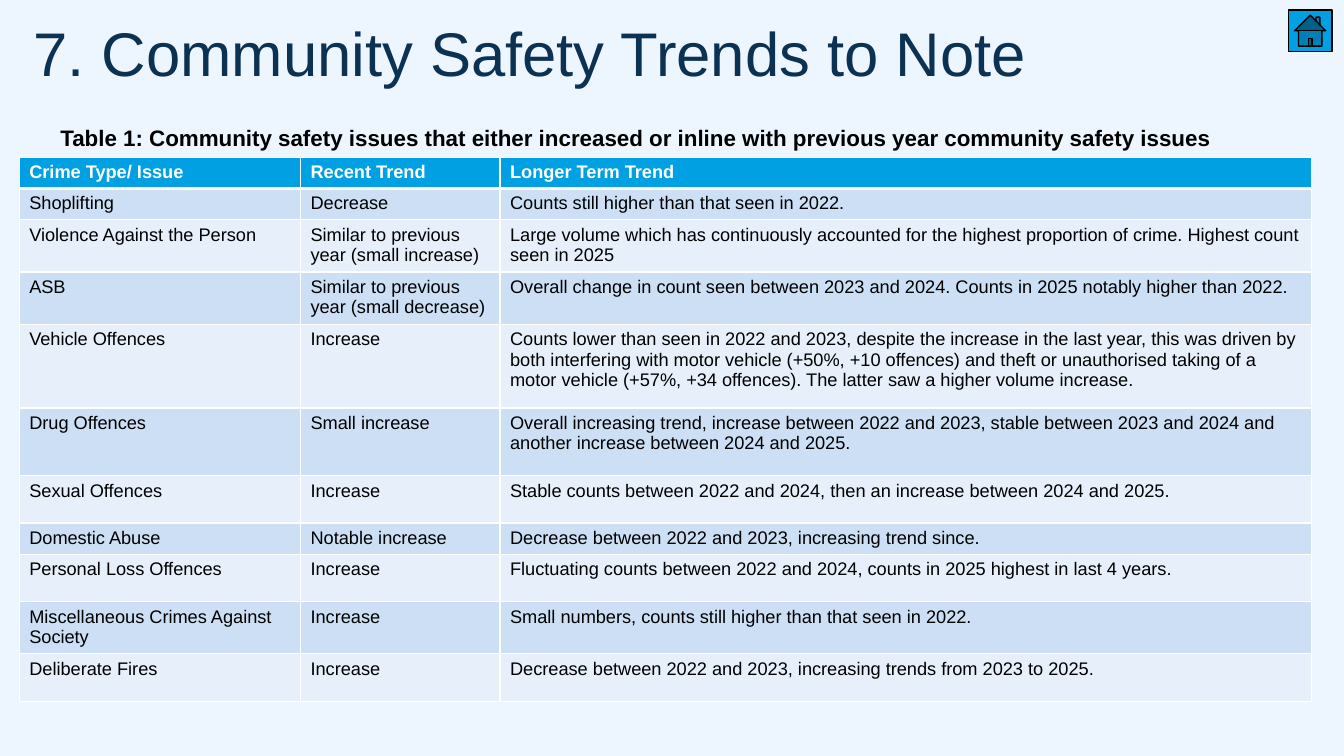
"""Build the community safety trends slide."""
from dataclasses import dataclass

from lxml import etree
from pptx import Presentation
from pptx.dml.color import RGBColor
from pptx.enum.shapes import MSO_SHAPE
from pptx.enum.text import MSO_ANCHOR, MSO_AUTO_SIZE, PP_ALIGN
from pptx.oxml.ns import qn
from pptx.util import Inches, Pt

HOME_BUTTON = MSO_SHAPE.ACTION_BUTTON_HOME
TOP = MSO_ANCHOR.TOP
FIXED_SIZE = MSO_AUTO_SIZE.NONE
LEFT = PP_ALIGN.LEFT
SLIDE_WIDTH, SLIDE_HEIGHT = Inches(13.33), Inches(7.5)


@dataclass(frozen=True)
class Theme:
    """Colours, type sizes and line widths of the slide."""
    font: str = "Arial"
    background: str = "EDF6FF"
    title: str = "0B3153"
    accent: str = "00A0E2"
    text: str = "000000"
    light: str = "FFFFFF"
    bands: tuple = ("CCDFF4", "E7F0FA")
    title_size: int = 44
    caption_size: int = 16
    cell_size: int = 13
    thin: int = 1
    thick: int = 3


THEME = Theme()
COLUMN_SHARES = (20.93, 14.85, 60.39)
HEADINGS = ("Crime Type/ Issue", "Recent Trend", "Longer Term Trend")
HEADING_SHARE = 4.13
TRENDS = (
    (4.13, "Shoplifting", "Decrease", "Counts still higher than that seen in 2022."),
    (6.93, "Violence Against the Person", "Similar to previous year (small increase)",
     "Large volume which has continuously accounted for the highest proportion of crime. "
     "Highest count seen in 2025"),
    (6.93, "ASB", "Similar to previous year (small decrease)",
     "Overall change in count seen between 2023 and 2024. Counts in 2025 notably higher than 2022."),
    (11.07, "Vehicle Offences", "Increase",
     "Counts lower than seen in 2022 and 2023, despite the increase in the last year, this was "
     "driven by both interfering with motor vehicle (+50%, +10 offences) and theft or unauthorised "
     "taking of a motor vehicle (+57%, +34 offences). The latter saw a higher volume increase."),
    (8.93, "Drug Offences", "Small increase",
     "Overall increasing trend, increase between 2022 and 2023, stable between 2023 and 2024 "
     "and another increase between 2024 and 2025."),
    (6.27, "Sexual Offences", "Increase",
     "Stable counts between 2022 and 2024, then an increase between 2024 and 2025."),
    (4.13, "Domestic Abuse", "Notable increase",
     "Decrease between 2022 and 2023, increasing trend since."),
    (6.27, "Personal Loss Offences", "Increase",
     "Fluctuating counts between 2022 and 2024, counts in 2025 highest in last 4 years."),
    (6.93, "Miscellaneous Crimes Against Society", "Increase",
     "Small numbers, counts still higher than that seen in 2022."),
    (6.27, "Deliberate Fires", "Increase",
     "Decrease between 2022 and 2023, increasing trends from 2023 to 2025."),
)


def across(percent):
    """Return a percentage of the slide width."""
    return round(SLIDE_WIDTH * percent / 100)


def down(percent):
    """Return a percentage of the slide height."""
    return round(SLIDE_HEIGHT * percent / 100)


def area(left, top, width, height):
    """Turn percentages of the slide into a position and size."""
    return across(left), down(top), across(width), down(height)


def set_fill(fill, colour):
    """Make a fill solid in one colour."""
    fill.solid()
    fill.fore_color.rgb = RGBColor.from_string(colour)


def write(text_frame, text, size, colour, bold=False):
    """Put one formatted paragraph in a text frame."""
    text_frame.text = text
    paragraph = text_frame.paragraphs[0]
    paragraph.alignment = LEFT
    font = paragraph.runs[0].font
    font.name, font.size, font.bold = THEME.font, Pt(size), bold
    font.color.rgb = RGBColor.from_string(colour)
    return paragraph


def add_title(slide, text):
    """Place and format the title placeholder."""
    title = slide.shapes.title
    title.left, title.top, title.width, title.height = area(2.48, 3.07, 86.27, 17.73)
    frame = title.text_frame
    frame.margin_left = frame.margin_top = frame.margin_right = frame.margin_bottom = 0
    frame.vertical_anchor = TOP
    frame.auto_size = FIXED_SIZE
    write(frame, text, THEME.title_size, THEME.title).line_spacing = 0.9


def add_caption(slide, text):
    """Add the heading above the table."""
    frame = slide.shapes.add_textbox(*area(3.75, 15.73, 94.67, 4.93)).text_frame
    frame.word_wrap = True
    write(frame, text, THEME.caption_size, THEME.text, bold=True)


def set_borders(cell, top, bottom):
    """Draw the cell's four borders, with given top and bottom widths."""
    properties = cell._tc.get_or_add_tcPr()
    widths = {"a:lnL": THEME.thin, "a:lnR": THEME.thin, "a:lnT": top, "a:lnB": bottom}
    for tag, width in widths.items():
        line = etree.SubElement(properties, qn(tag), w=str(Pt(width)))
        fill = etree.SubElement(line, qn("a:solidFill"))
        etree.SubElement(fill, qn("a:srgbClr"), val=THEME.light)


def add_trend_table(slide):
    """Add the table with a heading row and banded trend rows."""
    rows = ((HEADING_SHARE, *HEADINGS), *TRENDS)
    place = area(1.43, 20.8, sum(COLUMN_SHARES), sum(row[0] for row in rows))
    table = slide.shapes.add_table(len(rows), len(COLUMN_SHARES), *place).table
    for column, share in zip(table.columns, COLUMN_SHARES):
        column.width = across(share)
    for index, (share, *texts) in enumerate(rows):
        table.rows[index].height = down(share)
        heading = index == 0
        background = THEME.accent if heading else THEME.bands[(index - 1) % 2]
        top = THEME.thick if index == 1 else THEME.thin
        bottom = THEME.thick if heading else THEME.thin
        for cell, text in zip(table.rows[index].cells, texts):
            set_borders(cell, top, bottom)
            set_fill(cell.fill, background)
            write(cell.text_frame, text, THEME.cell_size,
                  THEME.light if heading else THEME.text, bold=heading)


def add_home_button(slide):
    """Add the home button in the top right corner."""
    shape = slide.shapes.add_shape(HOME_BUTTON, *area(95.87, 1.33, 3.23, 5.47))
    shape.shadow.inherit = False
    set_fill(shape.fill, THEME.accent)
    set_fill(shape.line.fill, THEME.text)
    shape.line.width = Pt(THEME.thin)


def main():
    """Build and save the presentation."""
    presentation = Presentation()
    presentation.slide_width, presentation.slide_height = SLIDE_WIDTH, SLIDE_HEIGHT
    slide = presentation.slides.add_slide(presentation.slide_layouts[5])
    set_fill(slide.background.fill, THEME.background)
    add_title(slide, "7. Community Safety Trends to Note")
    add_trend_table(slide)
    add_home_button(slide)
    add_caption(slide, "Table 1: Community safety issues that either increased or inline "
                       "with previous year community safety issues")
    presentation.save("out.pptx")


if __name__ == "__main__":
    main()
